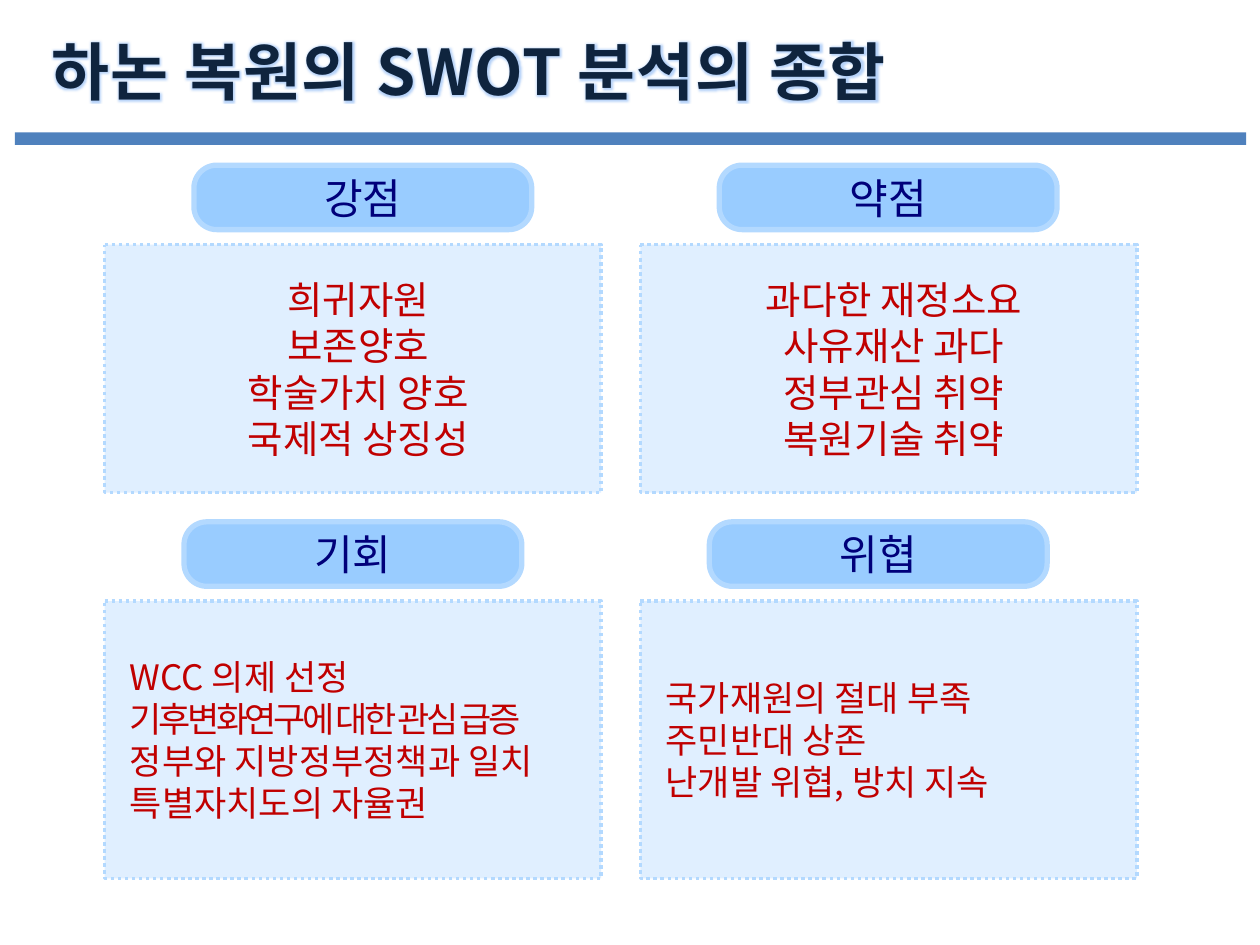
from lxml import etree
from pptx import Presentation
from pptx.dml.color import RGBColor
from pptx.enum.dml import MSO_LINE
from pptx.enum.shapes import MSO_SHAPE as SHAPE
from pptx.enum.text import MSO_ANCHOR as ANCHOR, MSO_AUTO_SIZE as AUTO, PP_ALIGN as ALIGN
from pptx.oxml import parse_xml
from pptx.oxml.ns import nsdecls, qn
from pptx.util import Cm, Pt

FONT = "Noto Sans CJK KR"
COLORS = {"bar": "4F81BD", "box": "99CCFF", "border": "B3D9FF", "white": "FFFFFF",
          "title": "0F243E", "heading": "00007A", "body": "C00000", "glow": "8DB9F5"}


def add_box(kind, left, top, width, height, fill, border=None):
    """Add a filled shape, sized in centimetres, with an optional border width in points."""
    sp = s.shapes.add_shape(kind, Cm(left), Cm(top), Cm(width), Cm(height))
    sp.shadow.inherit = False
    sp.fill.solid()
    sp.fill.fore_color.rgb = RGBColor.from_string(COLORS[fill])
    if border:
        sp.line.color.rgb = RGBColor.from_string(COLORS["border"])
        sp.line.width = Pt(border)
    else:
        sp.line.fill.background()
    return sp


def set_text(sp, text, size, color, align, bold=False):
    tf = sp.text_frame
    tf.text = text
    for p in tf.paragraphs:
        p.alignment = align
        for r in p.runs:
            r.font.size = Pt(size)
            r.font.bold = bold
            r.font.color.rgb = RGBColor.from_string(COLORS[color])
            r.font.name = FONT
            etree.SubElement(r.font._element, qn("a:ea"), typeface=FONT)
    return tf


prs = Presentation()
prs.slide_width, prs.slide_height = Cm(25.4), Cm(19.05)
s = prs.slides.add_slide(prs.slide_layouts[6])

# Title and rule
add_box(SHAPE.RECTANGLE, 0.3, 2.67, 24.82, 0.25, "bar")
title = add_box(SHAPE.RECTANGLE, 0.79, 0.53, 20.29, 1.8, "white")
tf = set_text(title, "하논 복원의 SWOT 분석의 종합", 36, "title", ALIGN.LEFT, bold=True)
tf.word_wrap = True
tf.auto_size = AUTO.SHAPE_TO_FIT_TEXT
tf.vertical_anchor = ANCHOR.TOP
rPr = tf.paragraphs[0].runs[0].font._element
rPr.set("spc", "50")
rPr.insert(0, parse_xml(
    f'<a:ln {nsdecls("a")} w="11430"><a:solidFill><a:srgbClr val="{COLORS["white"]}"/>'
    '</a:solidFill></a:ln>'))
rPr.find(qn("a:solidFill")).addnext(parse_xml(
    f'<a:effectLst {nsdecls("a")}><a:glow rad="45500"><a:srgbClr val="{COLORS["glow"]}">'
    '<a:alpha val="65000"/></a:srgbClr></a:glow></a:effectLst>'))

# SWOT quadrants: two rows of two
QUADRANTS = [
    [("강점", ["희귀자원", "보존양호", "학술가치 양호", "국제적 상징성"]),
     ("약점", ["과다한 재정소요", "사유재산 과다", "정부관심 취약", "복원기술 취약"])],
    [("기회", ["WCC 의제 선정", "기후변화연구에 대한 관심 급증",
             "정부와 지방정부정책과 일치", "특별자치도의 자율권"]),
     ("위협", ["국가재원의 절대 부족", "주민반대 상존", "난개발 위협, 방치 지속"])],
]
# Top, height, text size and alignment of each row's boxes
ROWS = [(4.93, 5, 22, ALIGN.CENTER), (12.12, 5.59, 20, ALIGN.LEFT)]

for row, (top, height, size, align) in enumerate(ROWS):
    for col, (heading, points) in enumerate(QUADRANTS[row]):
        body = add_box(SHAPE.ROUNDED_RECTANGLE, 2.11 + 10.8 * col, top, 10.01, height, "box", 2)
        body.adjustments[0] = 0
        body.line.dash_style = MSO_LINE.ROUND_DOT
        etree.SubElement(body.fill.fore_color._xFill.find(qn("a:srgbClr")),
                         qn("a:alpha"), val="30000")
        tf = set_text(body, "\n".join(points), size, "body", align)
        tf.word_wrap = True
        tf.vertical_anchor = ANCHOR.MIDDLE
        tf.margin_left = Cm(0.51)
        tf.margin_top = tf.margin_right = tf.margin_bottom = Cm(0.3)
        for p in tf.paragraphs:
            if align == ALIGN.CENTER:
                pPr = p._p.get_or_add_pPr()
                pPr.set("marL", str(Cm(1.27)))
                pPr.set("indent", str(-Cm(1.27)))
            if p.text.startswith("기후변화"):
                p.runs[0].font._element.set("spc", "-200")

        label = add_box(SHAPE.ROUNDED_RECTANGLE, 3.91 + 10.59 * col - 0.2 * row, top - 1.6,
                        6.81, 1.3, "box", 3)
        label.adjustments[0] = 0.355
        tf = set_text(label, heading, 24, "heading", ALIGN.CENTER)
        tf.word_wrap = False
        tf.vertical_anchor = ANCHOR.MIDDLE

prs.save("out.pptx")
